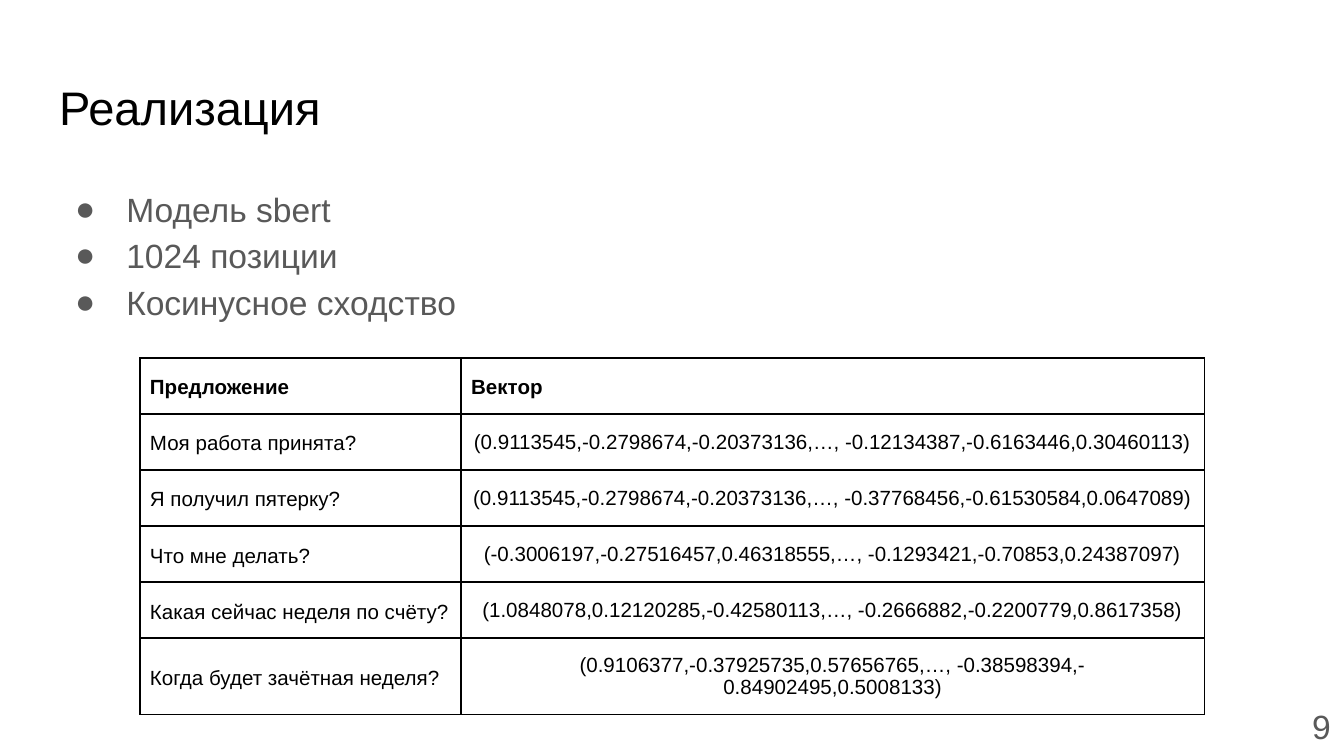
from dataclasses import dataclass

from lxml import etree
from pptx import Presentation
from pptx.dml.color import RGBColor
from pptx.enum.text import MSO_ANCHOR, PP_ALIGN
from pptx.oxml.ns import qn
from pptx.util import Inches, Pt

LEFT, CENTER, RIGHT = PP_ALIGN.LEFT, PP_ALIGN.CENTER, PP_ALIGN.RIGHT
TOP, MIDDLE = MSO_ANCHOR.TOP, MSO_ANCHOR.MIDDLE

SLIDE_WIDTH = 10
SLIDE_HEIGHT = SLIDE_WIDTH * 9 / 16
GRID_STEP = 0.1  # inches in one grid column or row

BULLETS = ["Модель sbert", "1024 позиции", "Косинусное сходство"]
HEADER = ("Предложение", "Вектор")
SENTENCE_VECTORS = [
    ("Моя работа принята?",
     "(0.9113545,-0.2798674,-0.20373136,…, -0.12134387,-0.6163446,0.30460113)"),
    ("Я получил пятерку?",
     "(0.9113545,-0.2798674,-0.20373136,…, -0.37768456,-0.61530584,0.0647089)"),
    ("Что мне делать?",
     "(-0.3006197,-0.27516457,0.46318555,…, -0.1293421,-0.70853,0.24387097)"),
    ("Какая сейчас неделя по счёту?",
     "(1.0848078,0.12120285,-0.42580113,…, -0.2666882,-0.2200779,0.8617358)"),
    ("Когда будет зачётная неделя?",
     "(0.9106377,-0.37925735,0.57656765,…, -0.38598394,-0.84902495,0.5008133)"),
]


@dataclass(frozen=True)
class Theme:
    font: str = "Arial"
    background: str = "FFFFFF"
    ink: str = "000000"
    muted: str = "595959"
    title_size: float = 25.2
    body_size: float = 18
    table_size: float = 11
    border_width: float = 1


def grid(steps):
    return Inches(steps * GRID_STEP)


def write_text(paragraph, text, *, font, size, color, bold=False, align=LEFT,
               line_spacing=None, space=None):
    paragraph.alignment = align
    if line_spacing:
        paragraph.line_spacing = line_spacing
    if space is not None:
        paragraph.space_before = paragraph.space_after = Pt(space)
    run = paragraph.add_run()
    run.text = text
    run.font.name = font
    run.font.size = Pt(size)
    run.font.bold = bold
    run.font.color.rgb = RGBColor.from_string(color)


def add_color(parent, tag, color):
    holder = etree.SubElement(parent, qn(tag))
    etree.SubElement(holder, qn("a:srgbClr"), val=color)


def add_bullet(paragraph, font, size, color):
    properties = paragraph._p.get_or_add_pPr()
    properties.set("marL", str(Inches(0.5)))
    properties.set("indent", str(-Inches(0.38)))
    add_color(properties, "a:buClr", color)
    etree.SubElement(properties, qn("a:buSzPts"), val=str(size * 100))
    etree.SubElement(properties, qn("a:buFont"), typeface=font)
    etree.SubElement(properties, qn("a:buChar"), char="●")


def add_borders(cell, color, width):
    """Outline all four sides; border elements must precede the cell fill."""
    properties = cell._tc.get_or_add_tcPr()
    for position, side in enumerate(("a:lnL", "a:lnR", "a:lnT", "a:lnB")):
        line = etree.Element(qn(side), w=str(Pt(width)))
        add_color(line, "a:solidFill", color)
        properties.insert(position, line)


class SlideBuilder:
    """Places themed elements on one slide, measured in grid steps."""

    def __init__(self, slide, theme):
        self.slide = slide
        self.theme = theme
        fill = slide.background.fill
        fill.solid()
        fill.fore_color.rgb = RGBColor.from_string(theme.background)

    def text(self, lines, left, top, width, height, *, anchor=TOP,
             bulleted=False, **style):
        box = self.slide.shapes.add_textbox(*map(grid, (left, top, width, height)))
        frame = box.text_frame
        frame.word_wrap = True
        frame.vertical_anchor = anchor
        frame.margin_left = frame.margin_right = Inches(0.1)
        frame.margin_top = frame.margin_bottom = Inches(0.1)
        for index, line in enumerate(lines):
            paragraph = frame.add_paragraph() if index else frame.paragraphs[0]
            write_text(paragraph, line, font=self.theme.font, **style)
            if bulleted:
                add_bullet(paragraph, self.theme.font, style["size"], style["color"])

    def table(self, rows, left, top, column_widths, row_height):
        frame = self.slide.shapes.add_table(
            len(rows), len(column_widths), grid(left), grid(top),
            grid(sum(column_widths)), grid(row_height * len(rows)))
        table = frame.table
        table.horz_banding = False
        for column, width in zip(table.columns, column_widths):
            column.width = grid(width)
        for row_index, values in enumerate(rows):
            table.rows[row_index].height = grid(row_height)
            for column_index, value in enumerate(values):
                self.cell(table.cell(row_index, column_index), value,
                          is_header=row_index == 0,
                          is_vector=row_index > 0 and column_index == 1)

    def cell(self, cell, value, is_header, is_vector):
        theme = self.theme
        cell.fill.background()
        cell.vertical_anchor = MIDDLE
        cell.margin_left = cell.margin_right = Pt(5.4)
        cell.margin_top = cell.margin_bottom = Inches(0.1)
        spacing = {"align": CENTER} if is_vector else {"line_spacing": 1.15, "space": 12}
        write_text(cell.text_frame.paragraphs[0], value, font=theme.font,
                   size=theme.table_size, color=theme.ink, bold=is_header, **spacing)
        add_borders(cell, theme.ink, theme.border_width)


def main():
    presentation = Presentation()
    presentation.slide_width = Inches(SLIDE_WIDTH)
    presentation.slide_height = Inches(SLIDE_HEIGHT)
    theme = Theme()
    builder = SlideBuilder(
        presentation.slides.add_slide(presentation.slide_layouts[6]), theme)

    builder.text(["Реализация"], 3.41, 4.87, 93.2, 6.3,
                 size=theme.title_size, color=theme.ink)
    builder.text(BULLETS, 3.41, 12.6, 93.2, 37.4, bulleted=True,
                 size=theme.body_size, color=theme.muted, line_spacing=1.15)
    builder.table([HEADER, *SENTENCE_VECTORS], 10.41, 26.64,
                  column_widths=(23.9, 55.3), row_height=4.17)
    builder.text(["9"], 94, 51.9, 6, 4.3, anchor=MIDDLE, align=RIGHT,
                 size=theme.body_size, color=theme.muted)
    presentation.save("out.pptx")


if __name__ == "__main__":
    main()
